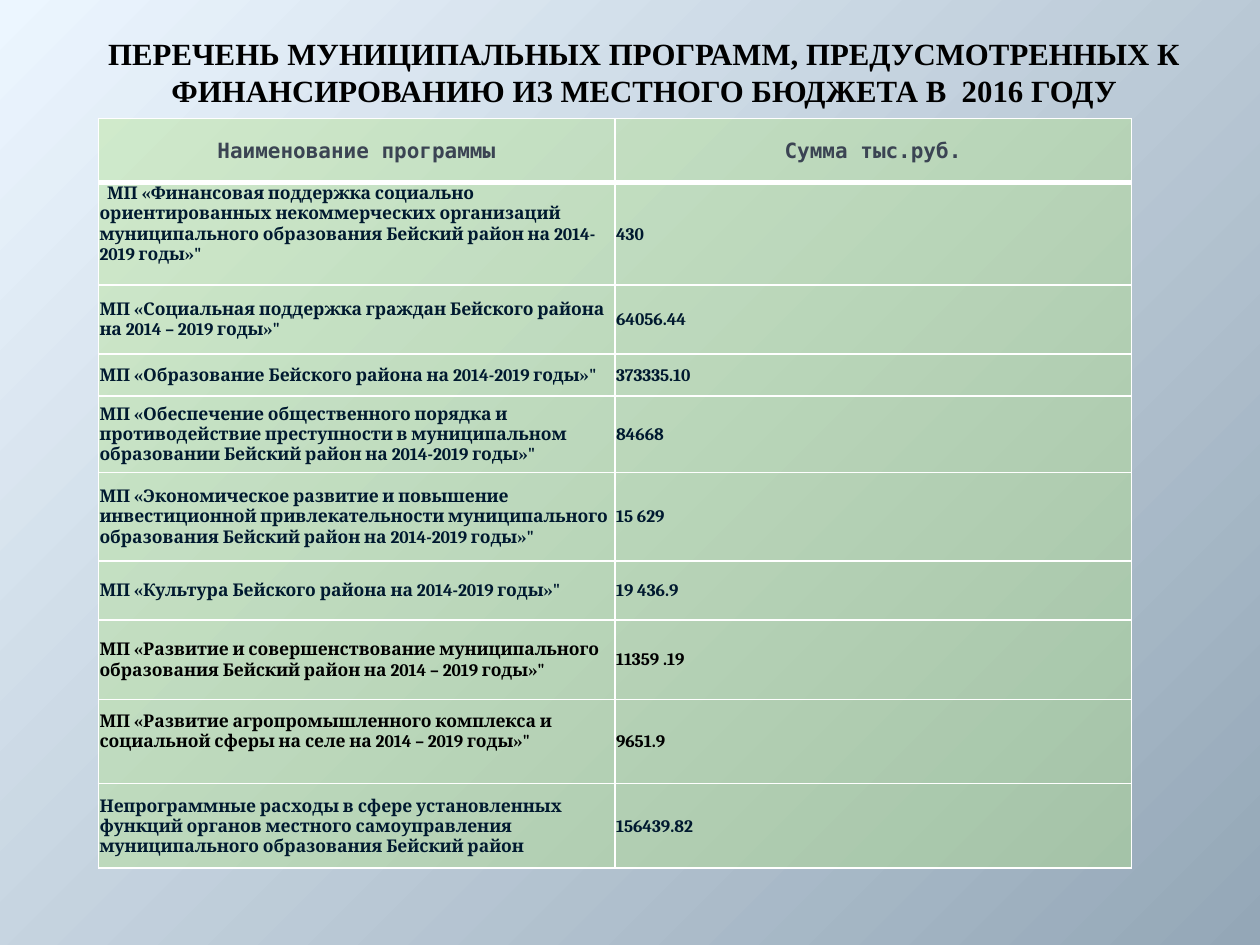
from lxml.etree import SubElement
from pptx import Presentation
from pptx.dml.color import RGBColor
from pptx.enum.text import MSO_ANCHOR, PP_ALIGN
from pptx.oxml import parse_xml
from pptx.oxml.ns import nsdecls, qn
from pptx.util import Inches, Pt

TITLE = ("ПЕРЕЧЕНЬ МУНИЦИПАЛЬНЫХ ПРОГРАММ, ПРЕДУСМОТРЕННЫХ К "
         "ФИНАНСИРОВАНИЮ ИЗ МЕСТНОГО БЮДЖЕТА В  2016 ГОДУ")
HEADINGS = ("Наименование программы", "Сумма тыс.руб.")
NAVY, BLACK, SLATE = "00192F", "000000", "3B4453"
WHITE, GREEN = "FFFFFF", "B2E389"
PROGRAMS = [
    ("МП «Финансовая поддержка социально ориентированных некоммерческих организаций "
     "муниципального образования Бейский район на 2014-2019 годы»\"", "430", 0.81, NAVY),
    ("МП «Социальная поддержка граждан Бейского района на 2014 – 2019 годы»\"",
     "64056.44", 0.55, NAVY),
    ("МП «Образование Бейского района на 2014-2019 годы»\"", "373335.10", 0.33, NAVY),
    ("МП «Обеспечение общественного порядка и противодействие преступности в "
     "муниципальном образовании Бейский район на 2014-2019 годы»\"", "84668", 0.61, NAVY),
    ("МП «Экономическое развитие и повышение инвестиционной привлекательности "
     "муниципального образования Бейский район на 2014-2019 годы»\"", "15 629", 0.7, NAVY),
    ("МП «Культура Бейского района на 2014-2019 годы»\"", "19 436.9", 0.47, NAVY),
    ("МП «Развитие и совершенствование муниципального образования Бейский район "
     "на 2014 – 2019 годы»\"", "11359 .19", 0.63, BLACK),
    ("МП «Развитие агропромышленного комплекса и социальной сферы на селе "
     "на 2014 – 2019 годы»\"", "9651.9", 0.67, BLACK),
    ("Непрограммные расходы в сфере установленных функций органов местного "
     "самоуправления муниципального образования Бейский район", "156439.82", 0.67, NAVY),
]
RAISED_ROWS = (1, 8)
HEADER_HEIGHT, COLUMN_WIDTH = 0.51, 4.1
LEFT, TABLE_TOP = 0.78, 0.94


def rgb(color):
    return RGBColor.from_string(color)


def style(paragraph, font, size, color, align=PP_ALIGN.LEFT):
    paragraph.alignment = align
    paragraph.font.name = font
    paragraph.font.size = Pt(size)
    paragraph.font.bold = True
    paragraph.font.color.rgb = rgb(color)


def set_margins(target, side, top, bottom):
    target.margin_left = target.margin_right = Inches(side)
    target.margin_top, target.margin_bottom = Inches(top), Inches(bottom)


def fill_cell(cell, text, row, font, size, color, align):
    cell.text = text
    cell.vertical_anchor = MSO_ANCHOR.MIDDLE
    set_margins(cell, 0.01, 0.01, 0)
    style(cell.text_frame.paragraphs[0], font, size, color, align)
    cell.fill.solid()
    cell.fill.fore_color.rgb = rgb(GREEN)
    properties = cell._tc.get_or_add_tcPr()
    shade = properties.find(qn("a:solidFill"))[0]
    SubElement(shade, qn("a:alpha")).set("val", "40000")
    widths = {"L": 1, "R": 1, "T": 3 if row == 1 else 1, "B": 3 if row == 0 else 1}
    for position, (side, width) in enumerate(widths.items()):
        properties.insert(position, parse_xml(
            f'<a:ln{side} {nsdecls("a")} w="{Pt(width)}"><a:solidFill>'
            f'<a:srgbClr val="{WHITE}"/></a:solidFill></a:ln{side}>'))


def paint_background(slide):
    fill = slide.background.fill
    fill.gradient()
    for stop, color in zip(fill.gradient_stops, ("ECF6FF", "94A7B7")):
        stop.color.rgb = rgb(color)
    gradient = slide.background._cSld.find(".//" + qn("a:gradFill"))
    gradient.replace(gradient.find(qn("a:lin")), parse_xml(
        f'<a:path {nsdecls("a")} path="circle">'
        '<a:fillToRect r="100000" b="100000"/></a:path>'))


def add_title(slide):
    frame = slide.shapes.add_textbox(
        Inches(LEFT), Inches(0.23), Inches(8.67), Inches(0.63)).text_frame
    frame.word_wrap = True
    frame.vertical_anchor = MSO_ANCHOR.BOTTOM
    set_margins(frame, 0.05, 0, 0)
    frame.text = TITLE
    style(frame.paragraphs[0], "Times New Roman", 17.6, BLACK, PP_ALIGN.CENTER)


def add_programs(slide):
    heights = [HEADER_HEIGHT] + [height for _, _, height, _ in PROGRAMS]
    table = slide.shapes.add_table(
        len(heights), len(HEADINGS), Inches(LEFT), Inches(TABLE_TOP),
        Inches(COLUMN_WIDTH * len(HEADINGS)), Inches(sum(heights))).table
    for column in table.columns:
        column.width = Inches(COLUMN_WIDTH)
    for row, height in zip(table.rows, heights):
        row.height = Inches(height)
    for column, heading in enumerate(HEADINGS):
        fill_cell(table.cell(0, column), heading, 0,
                  "DejaVu Sans Mono", 12, SLATE, PP_ALIGN.CENTER)
    for row, (name, amount, _, color) in enumerate(PROGRAMS, 1):
        for column, text in enumerate((name, amount)):
            fill_cell(table.cell(row, column), text, row,
                      "Cambria", 10, color, PP_ALIGN.LEFT)
    for row in RAISED_ROWS:
        table.cell(row, 0).margin_bottom = Inches(0.16)
    first_name = table.cell(1, 0).text_frame.paragraphs[0]
    first_name._p.get_or_add_pPr().set("indent", str(Inches(0.06)))


def main():
    deck = Presentation()
    deck.slide_width, deck.slide_height = Inches(10), Inches(7.5)
    slide = deck.slides.add_slide(deck.slide_layouts[6])
    paint_background(slide)
    add_programs(slide)
    add_title(slide)
    deck.save("out.pptx")


if __name__ == "__main__":
    main()
